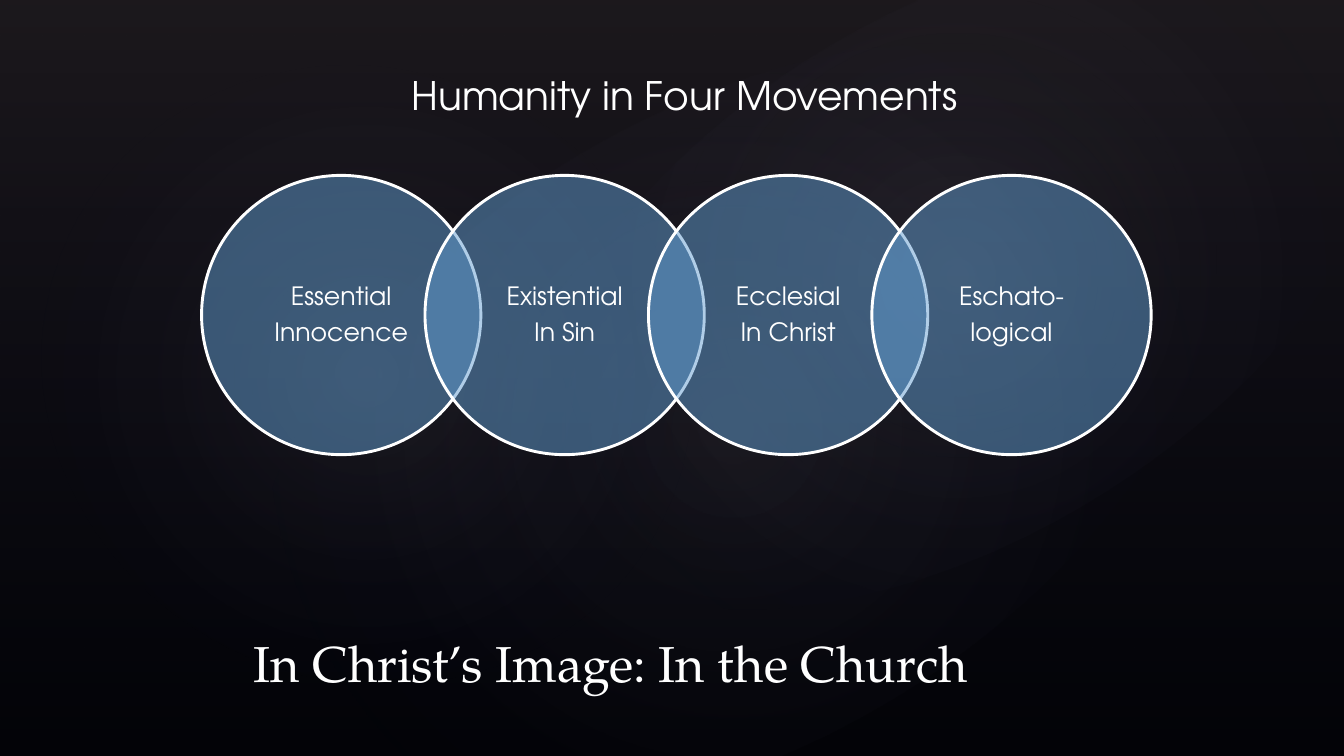
from dataclasses import dataclass
from typing import Optional

from lxml.etree import SubElement
from pptx import Presentation
from pptx.dml.color import RGBColor as Color
from pptx.enum.shapes import MSO_SHAPE as Preset
from pptx.enum.text import MSO_ANCHOR as Anchor, PP_ALIGN as Align
from pptx.oxml import parse_xml
from pptx.oxml.ns import nsdecls, qn
from pptx.shapes.autoshape import Shape
from pptx.slide import Slide
from pptx.text.text import TextFrame
from pptx.util import Pt


@dataclass(frozen=True)
class Theme:
    black: str = "000000"
    white: str = "FFFFFF"
    navy: str = "242852"
    plum: str = "504652"
    mist: str = "C4BCC6"
    blue: str = "629DD1"
    sans: str = "TeX Gyre Adventor"
    serif: str = "TeX Gyre Pagella"
    label_size: float = 18
    heading_size: float = 28
    title_size: float = 36


@dataclass(frozen=True)
class Stop:
    position: int
    color: str
    opacity: int


@dataclass(frozen=True)
class Glow:
    preset: Preset
    left: float
    top: float
    width: float
    height: float
    rotation: float
    stops: tuple[Stop, ...]
    radial: bool = True


@dataclass(frozen=True)
class Caption:
    text: str
    left: float
    top: float
    width: float
    height: float
    font: str
    size: float
    align: Align
    anchor: Anchor


THEME = Theme()
WIDTH, HEIGHT = 960, 540


def halo(opacity: int) -> tuple[Stop, ...]:
    return Stop(0, THEME.mist, opacity), Stop(58, THEME.navy, 0)


GLOWS = [
    Glow(Preset.RECTANGLE, 0, 0, WIDTH, HEIGHT, 0,
         (Stop(0, THEME.plum, 36), Stop(100, THEME.navy, 10)), radial=False),
    Glow(Preset.OVAL, 144, 82, 760, 449, 328.7, halo(7)),
    Glow(Preset.OVAL, 44, 33, 436, 470, 294.3, halo(8)),
    Glow(Preset.OVAL, 344, 9.5, 680, 374.5, 328.7, halo(8)),
]

MOVEMENTS = [
    "Essential\nInnocence",
    "Existential\nIn Sin",
    "Ecclesial\nIn Christ",
    "Eschato-\nlogical",
]
CIRCLE_LEFT, CIRCLE_TOP, DIAMETER = 144, 125.3, 199.5
CIRCLE_STEP = 0.8 * DIAMETER  # neighbours overlap by a fifth

CAPTIONS = [
    Caption("In Christ’s Image: In the Church", 174, 426, 594, 72,
            THEME.serif, THEME.title_size, Align.LEFT, Anchor.BOTTOM),
    Caption("Humanity in Four Movements", 246, 47.5, 486, 41,
            THEME.sans, THEME.heading_size, Align.CENTER, Anchor.TOP),
]


def add_preset(page: Slide, preset: Preset, left: float, top: float,
               width: float, height: float) -> Shape:
    shape = page.shapes.add_shape(preset, Pt(left), Pt(top), Pt(width), Pt(height))
    shape.shadow.inherit = False
    return shape


def write(frame: TextFrame, text: str, font: str, size: float, align: Align,
          line_spacing: Optional[float] = None, space_after: float = 0) -> None:
    frame.word_wrap = True
    frame.text = text
    for para in frame.paragraphs:
        para.alignment = align
        para.line_spacing = line_spacing
        para.space_after = Pt(space_after)
        for span in para.runs:
            span.font.name = font
            span.font.size = Pt(size)
            span.font.color.rgb = Color.from_string(THEME.white)


def draw_glow(page: Slide, glow: Glow) -> None:
    shape = add_preset(page, glow.preset, glow.left, glow.top, glow.width, glow.height)
    shape.rotation = glow.rotation
    shape.line.fill.background()
    stops = "".join(
        f'<a:gs pos="{stop.position * 1000}"><a:srgbClr val="{stop.color}">'
        f'<a:alpha val="{stop.opacity * 1000}"/></a:srgbClr></a:gs>'
        for stop in glow.stops)
    if glow.radial:
        direction = ('<a:path path="circle"><a:fillToRect l="50000" t="50000" '
                     'r="50000" b="50000"/></a:path>')
    else:
        direction = '<a:lin ang="5400000" scaled="0"/>'
    gradient = parse_xml(f'<a:gradFill {nsdecls("a")} rotWithShape="1">'
                         f'<a:gsLst>{stops}</a:gsLst>{direction}</a:gradFill>')
    shape.element.spPr.find(qn("a:prstGeom")).addnext(gradient)


def draw_movement(page: Slide, index: int, label: str) -> None:
    circle = add_preset(page, Preset.OVAL, CIRCLE_LEFT + index * CIRCLE_STEP,
                        CIRCLE_TOP, DIAMETER, DIAMETER)
    circle.fill.solid()
    circle.fill.fore_color.rgb = Color.from_string(THEME.blue)
    tint = circle.element.spPr.find(qn("a:solidFill")).find(qn("a:srgbClr"))
    SubElement(tint, qn("a:alpha")).set("val", "50000")
    circle.line.color.rgb = Color.from_string(THEME.white)
    circle.line.width = Pt(2.08)
    frame = circle.text_frame
    frame.vertical_anchor = Anchor.MIDDLE
    frame.margin_left = frame.margin_right = Pt(11)
    frame.margin_top = frame.margin_bottom = Pt(2)
    write(frame, label, THEME.sans, THEME.label_size, Align.CENTER,
          line_spacing=0.9, space_after=0.35 * THEME.label_size)


def draw_caption(page: Slide, caption: Caption) -> None:
    box = page.shapes.add_textbox(Pt(caption.left), Pt(caption.top),
                                  Pt(caption.width), Pt(caption.height))
    box.text_frame.vertical_anchor = caption.anchor
    write(box.text_frame, caption.text, caption.font, caption.size, caption.align)


def main() -> None:
    deck = Presentation()
    deck.slide_width, deck.slide_height = Pt(WIDTH), Pt(HEIGHT)
    page = deck.slides.add_slide(deck.slide_layouts[6])

    # Dark backdrop with soft glows
    page.background.fill.solid()
    page.background.fill.fore_color.rgb = Color.from_string(THEME.black)
    for glow in GLOWS:
        draw_glow(page, glow)

    # Row of overlapping circles
    for index, label in enumerate(MOVEMENTS):
        draw_movement(page, index, label)

    # Title and heading
    for caption in CAPTIONS:
        draw_caption(page, caption)

    deck.save("out.pptx")


if __name__ == "__main__":
    main()
